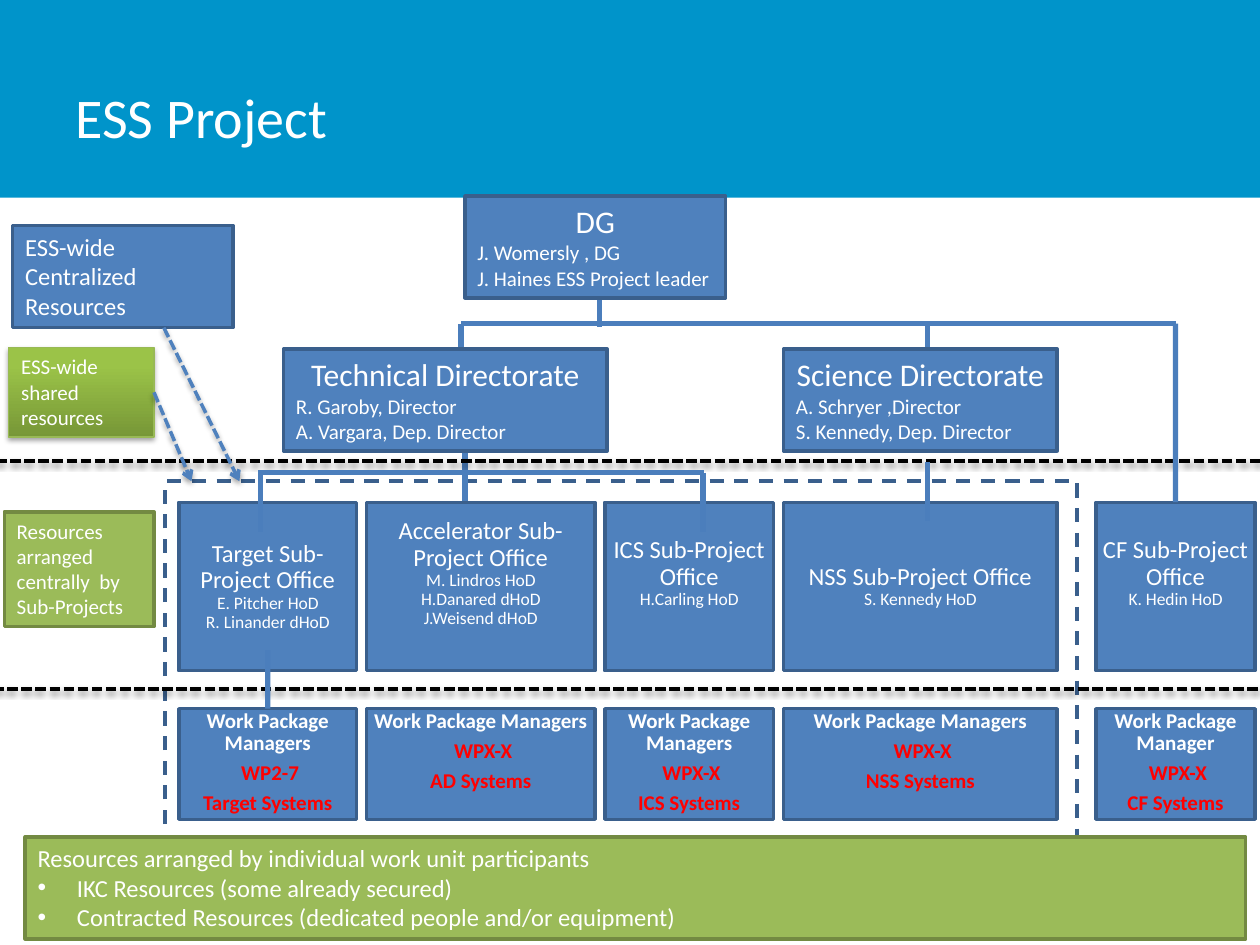
import lxml.etree
import pptx
import pptx.dml.color
import pptx.enum.dml
import pptx.enum.shapes
import pptx.enum.text
import pptx.oxml
import pptx.oxml.ns
import pptx.util

Pt = pptx.util.Pt
ALIGN = pptx.enum.text.PP_ALIGN
ANCHOR = pptx.enum.text.MSO_ANCHOR
DASH = pptx.enum.dml.MSO_LINE
RECTANGLE = pptx.enum.shapes.MSO_SHAPE.RECTANGLE
FONT = "Calibri"
COLOURS = {
    "header": "0094CA", "white": "FFFFFF", "black": "000000", "red": "FF0000",
    "blue": "4F81BD", "blue edge": "3A5F8C", "link": "4B7EBC",
    "green": "9BBB59", "green edge": "738A42", "soft edge": "98B955",
    "green dark": "779737", "green light": "9BC348",
}
COLOURS = {name: pptx.dml.color.RGBColor.from_string(code) for name, code in COLOURS.items()}
SHADOW = (
    f'<a:outerShdw {pptx.oxml.ns.nsdecls("a")} blurRad="39400" dist="21600" dir="5400000" '
    'rotWithShape="0"><a:srgbClr val="000000"><a:alpha val="37000"/></a:srgbClr></a:outerShdw>'
)

deck = pptx.Presentation()
deck.slide_width, deck.slide_height = Pt(720), Pt(540)
page = deck.slides.add_slide(deck.slide_layouts[6])


def add_box(place, fill, edge, rows=(), anchor=ANCHOR.TOP):
    """Add a rectangle; each row is (text, size, alignment, colour)."""
    box = page.shapes.add_shape(RECTANGLE, *map(Pt, place))
    box.shadow.inherit = False
    box.fill.solid()
    box.fill.fore_color.rgb = COLOURS[fill]
    if edge:
        box.line.color.rgb = COLOURS[edge]
        box.line.width = Pt(2)
    else:
        box.line.fill.background()
    frame = box.text_frame
    frame.word_wrap = True
    frame.vertical_anchor = anchor
    for index, (text, size, align, colour) in enumerate(rows):
        para = frame.add_paragraph() if index else frame.paragraphs[0]
        para.alignment = align
        span = para.add_run()
        span.text = text
        span.font.name, span.font.size = FONT, Pt(size)
        span.font.color.rgb = COLOURS[colour]
    return box


def add_line(start, end, colour="link", width=3, dashed=False, arrow=False):
    """Add a straight line; dashed lines carry a soft shadow."""
    line = page.shapes.add_connector(
        pptx.enum.shapes.MSO_CONNECTOR.STRAIGHT, *map(Pt, (*start, *end)))
    line.line.color.rgb = COLOURS[colour]
    line.line.width = Pt(width)
    if dashed:
        line.line.dash_style = DASH.SQUARE_DOT
    properties = line._element.spPr
    if arrow:
        tip = lxml.etree.SubElement(line.line._get_or_add_ln(), pptx.oxml.ns.qn("a:tailEnd"))
        tip.set("type", "arrow")
    effects = lxml.etree.SubElement(properties, pptx.oxml.ns.qn("a:effectLst"))
    if dashed:
        effects.append(pptx.oxml.parse_xml(SHADOW))
    return line


# Header band and title
add_box((0, 0, 720, 113), "header", None)
title = page.shapes.add_textbox(Pt(36), Pt(21.6), Pt(562), Pt(90)).text_frame
title.word_wrap = True
title.vertical_anchor = ANCHOR.MIDDLE
span = title.paragraphs[0].add_run()
span.text = "ESS Project"
span.font.name, span.font.size = FONT, Pt(32)
span.font.color.rgb = COLOURS["white"]

# Drops from the director general to the directorates
BUS_TOP = 185
add_line((342.7, 139.7), (342.7, 187))
for x in (263.5, 530):
    add_line((x, BUS_TOP), (x, 232.6))

# Dashed frame around the shared sub-projects
frame_box = add_box((94.3, 275, 521.3, 203), "white", "blue edge")
frame_box.line.dash_style = DASH.DASH

# Technical branch and level dividers
add_line((265.7, 257.8), (265.7, 305.3))
add_line((-20, 393.8), (771, 393.8), "black", 2, dashed=True)
add_line((-42.5, 263.5), (780, 263.5), "black", 2, dashed=True)

# Sub-project offices and their work packages:
# left, width, office, people, space kept below, managers, package, systems
COLUMNS = [
    (102.2, 101.7, "Target", ["E. Pitcher HoD", "R. Linander dHoD"], 0, "Managers", "WP2-7", "Target"),
    (209.5, 130.5, "Accelerator", ["M. Lindros HoD", "H.Danared dHoD", "J.Weisend dHoD"], 15,
     "Managers", "WPX-X", "AD"),
    (345.6, 96.5, "ICS", ["H.Carling HoD"], 15, "Managers", "WPX-X", "ICS"),
    (447.8, 156.3, "NSS", ["S. Kennedy HoD"], 0, "Managers", "WPX-X", "NSS"),
    (626.4, 90.7, "CF", ["K. Hedin HoD"], 15, "Manager", "WPX-X", "CF"),
]
offices, packages = {}, {}
for left, width, name, people, below, managers, package, systems in COLUMNS:
    office_rows = [(f"{name} Sub-Project Office", 14, ALIGN.CENTER, "white")]
    office_rows += [(person, 10, ALIGN.CENTER, "white") for person in people]
    package_rows = [
        (f"Work Package {managers}", 12, ALIGN.CENTER, "white"),
        (f" {package}", 12, ALIGN.CENTER, "red"),
        (f"{systems} Systems", 12, ALIGN.CENTER, "red"),
    ]
    offices[name] = add_box((left, 287, width, 96.3), "blue", "blue edge", office_rows, ANCHOR.MIDDLE)
    packages[name] = add_box((left, 405, width, 63.2), "blue", "blue edge", package_rows)
    for box in (offices[name], packages[name]):
        frame = box.text_frame
        frame.margin_left = frame.margin_right = frame.margin_top = frame.margin_bottom = Pt(0.7)
        for para in frame.paragraphs:
            para.line_spacing = 0.9
    offices[name].text_frame.margin_bottom = Pt(0.7 + below)
    for para in packages[name].text_frame.paragraphs:
        para.space_after = Pt(4.2)
        para.runs[0].font.bold = True

# Directors
DIRECTORS = [
    ((162, 199.5, 185, 58.2), "Technical Directorate", "R. Garoby, Director", "A. Vargara, Dep. Director"),
    ((447.8, 199.5, 156.3, 58.2), "Science Directorate", "A. Schryer ,Director", "S. Kennedy, Dep. Director"),
    ((265.7, 112, 149, 58.2), "DG", "J. Womersly , DG", "J. Haines ESS Project leader"),
]
for place, heading, *people in DIRECTORS:
    rows = [(heading, 18, ALIGN.CENTER, "white")]
    rows += [(person, 12, ALIGN.LEFT, "white") for person in people]
    add_box(place, "blue", "blue edge", rows)

# Resource labels on the left
add_box((7.2, 128.9, 126, 58.2), "blue", "blue edge",
        [("ESS-wide Centralized Resources", 14, ALIGN.LEFT, "white")])
add_box((2.5, 292.5, 85.5, 65.5), "green", "green edge",
        [("Resources arranged centrally  by Sub-Projects", 12, ALIGN.LEFT, "white")])
shared = add_box((5, 198.7, 83, 51), "green", "soft edge",
                 [("ESS-wide shared resources", 12, ALIGN.LEFT, "white")])
shared.line.width = Pt(0.75)
shared.fill.gradient()
shared.fill.gradient_angle = 90
for stop, position, colour in zip(shared.fill.gradient_stops, (0, 0.8), ("green dark", "green light")):
    stop.position = position
    stop.color.rgb = COLOURS[colour]
shared._element.spPr.find(pptx.oxml.ns.qn("a:effectLst")).append(pptx.oxml.parse_xml(SHADOW))

# Work unit resources along the bottom
work_units = add_box((14.4, 478.3, 697.5, 58.2), "green", "green edge", [
    (text, 14, ALIGN.LEFT, "white") for text in (
        "Resources arranged by individual work unit participants",
        "IKC Resources (some already secured)",
        "Contracted Resources (dedicated people and/or equipment)")])
for para in work_units.text_frame.paragraphs[1:]:
    settings = para._p.get_or_add_pPr()
    settings.set("marL", str(Pt(22.5)))
    settings.set("indent", str(-Pt(22.5)))
    lxml.etree.SubElement(settings, pptx.oxml.ns.qn("a:buFont")).set("typeface", "Arial")
    lxml.etree.SubElement(settings, pptx.oxml.ns.qn("a:buChar")).set("char", "•")

# Arrows from the resource labels to the frame
add_line((93.6, 187.2), (136.8, 275), "blue", 2, dashed=True, arrow=True)
shared_arrow = add_line((88, 224.2), (109.4, 275), "blue", 2, dashed=True, arrow=True)
shared_arrow.begin_connect(shared, 3)

# Links drawn over the boxes
add_line((263.5, BUS_TOP), (671.8, BUS_TOP))
add_line((671.8, BUS_TOP), (671.8, 287)).end_connect(offices["CF"], 0)
add_line((147.6, 270), (402.5, 270))
for x, top in ((149, 270), (401.8, 270), (530, 264.2)):
    add_line((x, top), (x, top + 33.8))
add_line((153, 371.5), (153, 405)).end_connect(packages["Target"], 0)

deck.save("out.pptx")
